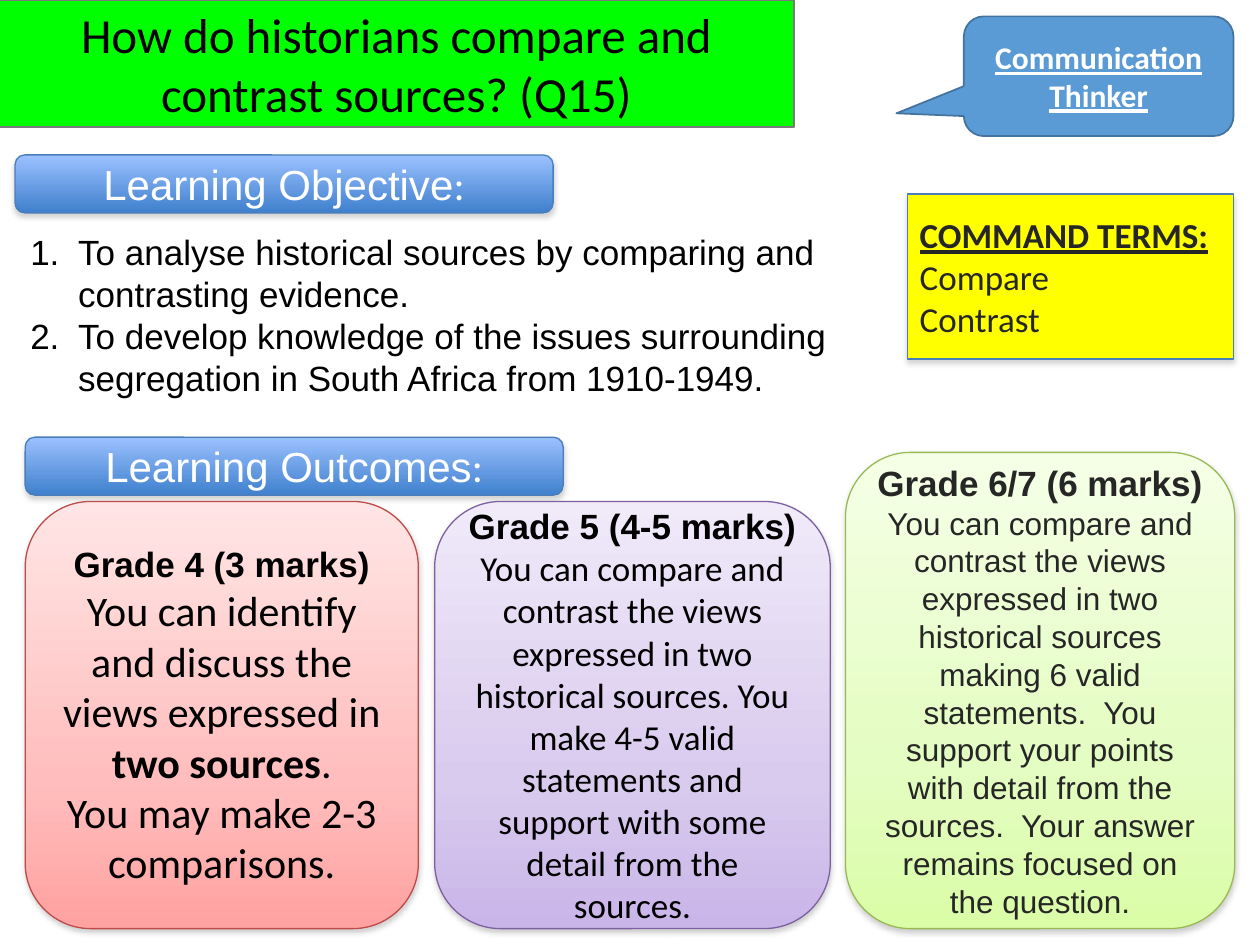
from lxml.etree import SubElement
from pptx import Presentation
from pptx.dml.color import RGBColor
from pptx.enum.shapes import MSO_SHAPE
from pptx.enum.text import MSO_ANCHOR, MSO_AUTO_SIZE, PP_ALIGN
from pptx.oxml.ns import qn
from pptx.util import Inches, Pt

# A run is (text, size, font, bold, underline); a paragraph is a list of runs.
TITLE = [[("How do historians compare and contrast sources? (Q15)", 28, "Calibri", False, False)]]
OBJECTIVES = [
    [("To analyse historical sources by comparing and contrasting evidence.", 20, "Arial", False, False)],
    [("To develop knowledge of the issues surrounding segregation in South Africa from 1910-1949.",
      20, "Arial", False, False)],
]
COMMAND_TERMS = [
    [("COMMAND TERMS:", 20, "Calibri", True, True)],
    [("Compare", 20, "Calibri", False, False)],
    [("Contrast", 20, "Calibri", False, False)],
]
THINKER = [[(word, 18, "Calibri", True, True)] for word in ("Communication", "Thinker")]
HEADINGS = [("Learning Objective", 0.12, 1.23), ("Learning Outcomes", 0.2, 3.47)]
HEADING_STOPS = [(0, "9BC1FF"), (100, "3F80CD")]
# heading, body paragraphs, box, gradient, line colour, text colour
GRADES = [
    ("Grade 4 (3 marks)",
     [[("You can identify and discuss the views expressed in ", 24, "Calibri", False, False),
       ("two sources", 24, "Calibri", True, False),
       (".", 24, "Calibri", False, False)],
      [("You may make 2-3 comparisons.", 24, "Calibri", False, False)]],
     (0.2, 3.98, 3.12, 3.39), [(0, "FFE5E5"), (65, "FFBEBD"), (100, "FFA2A1")], "BE4B48", "000000"),
    ("Grade 5 (4-5 marks)",
     [[("You can compare and contrast the views expressed in two historical sources. "
        "You make 4-5 valid statements and support with some detail from the sources.",
        20, "Calibri", False, False)]],
     (3.45, 3.98, 3.14, 3.39), [(0, "F0EAF9"), (65, "D9CBEE"), (100, "C9B5E8")], "7D60A0", "000000"),
    ("Grade 6/7 (6 marks)",
     [[("You can compare and contrast the views expressed in two historical sources "
        "making 6 valid statements.  You support your points with detail from the sources.  "
        "Your answer remains focused on the question.", 18, "Arial", False, False)]],
     (6.71, 3.59, 3.09, 3.78), [(0, "F5FFE6"), (65, "E4FDC2"), (100, "DAFDA7")], "98B954", "262626"),
]


def rgb(value):
    return RGBColor.from_string(value)


def place(sp, box):
    sp.left, sp.top, sp.width, sp.height = (Inches(v) for v in box)


def write(sp, paragraphs, color, align=PP_ALIGN.CENTER, anchor=MSO_ANCHOR.MIDDLE):
    tf = sp.text_frame
    tf.word_wrap = True
    tf.auto_size = MSO_AUTO_SIZE.NONE
    tf.vertical_anchor = anchor
    for i, runs in enumerate(paragraphs):
        p = tf.paragraphs[0] if i == 0 else tf.add_paragraph()
        p.alignment = align
        p.space_before = Pt(0)
        for text, size, font, bold, underline in runs:
            r = p.add_run()
            r.text = text
            r.font.size, r.font.name = Pt(size), font
            r.font.bold, r.font.underline = bold, underline
            r.font.color.rgb = rgb(color)


def paint(sp, fill, line, width=0.75):
    """Fill with one colour, or downwards with (percent, colour) stops, and outline."""
    if isinstance(fill, str):
        sp.fill.solid()
        sp.fill.fore_color.rgb = rgb(fill)
    else:
        sp.fill.gradient()
        sp.fill.gradient_angle = 270
        stops = sp._element.spPr.find(".//" + qn("a:gsLst"))
        for old in list(stops):
            stops.remove(old)
        for percent, color in fill:
            gs = SubElement(stops, qn("a:gs"), pos=str(percent * 1000))
            SubElement(gs, qn("a:srgbClr"), val=color)
    sp.line.color.rgb = rgb(line)
    sp.line.width = Pt(width)


def add_shape(kind, box, fill, line, width=0.75):
    sp = s.shapes.add_shape(kind, *(Inches(v) for v in box))
    paint(sp, fill, line, width)
    sp.shadow.inherit = False
    return sp


def drop_shadow(sp, alpha, distance):
    effects = sp._element.spPr.find(qn("a:effectLst"))
    shadow = SubElement(effects, qn("a:outerShdw"), blurRad=str(Pt(3.1)), dist=str(Pt(distance)),
                        dir="5400000", rotWithShape="0")
    color = SubElement(shadow, qn("a:srgbClr"), val="808080")
    SubElement(color, qn("a:alpha"), val=str(alpha * 1000))


def number(p):
    pPr = p._p.get_or_add_pPr()
    pPr.set("marL", str(Inches(0.38)))
    pPr.set("indent", str(Inches(-0.38)))
    SubElement(pPr, qn("a:buFont"), typeface="+mj-lt")
    SubElement(pPr, qn("a:buAutoNum"), type="arabicPeriod")


prs = Presentation()
prs.slide_width, prs.slide_height = Inches(10), Inches(7.5)
s = prs.slides.add_slide(prs.slide_layouts[1])
title, objectives = s.placeholders

place(title, (-0.01, 0, 6.31, 1.01))
geometry = SubElement(title._element.spPr, qn("a:prstGeom"), prst="roundRect")
SubElement(geometry, qn("a:avLst"))
paint(title, "00FF00", "7A7A7A", 1)
write(title, TITLE, "000000")

place(objectives, (0.14, 1.78, 7.23, 1.45))
write(objectives, OBJECTIVES, "000000", PP_ALIGN.LEFT, MSO_ANCHOR.TOP)
for p in objectives.text_frame.paragraphs:
    number(p)

for text, left, top in HEADINGS:
    sp = add_shape(MSO_SHAPE.ROUNDED_RECTANGLE, (left, top, 4.27, 0.46), HEADING_STOPS, "4A7EBB")
    drop_shadow(sp, 35, 1.8)
    write(sp, [[(text, 24, "Arial", False, False), (":", 24, "Calibri", False, False)]], "FFFFFF")

for heading, body, box, stops, line, color in GRADES:
    sp = add_shape(MSO_SHAPE.ROUNDED_RECTANGLE, box, stops, line)
    drop_shadow(sp, 38, 1.6)
    write(sp, [[(heading, 20, "Arial", True, False)]] + body, color)

terms = add_shape(MSO_SHAPE.RECTANGLE, (7.2, 1.54, 2.59, 1.31), "FFFF00", "4A7EBB")
drop_shadow(terms, 35, 1.8)
write(terms, COMMAND_TERMS, "262626", PP_ALIGN.LEFT)

thinker = add_shape(MSO_SHAPE.ROUNDED_RECTANGULAR_CALLOUT, (7.65, 0.13, 2.14, 0.95),
                    "5B9BD5", "43739E", 1)
thinker.adjustments[0], thinker.adjustments[1] = -0.75, 0.31
write(thinker, THINKER, "FFFFFF")

prs.save("out.pptx")
